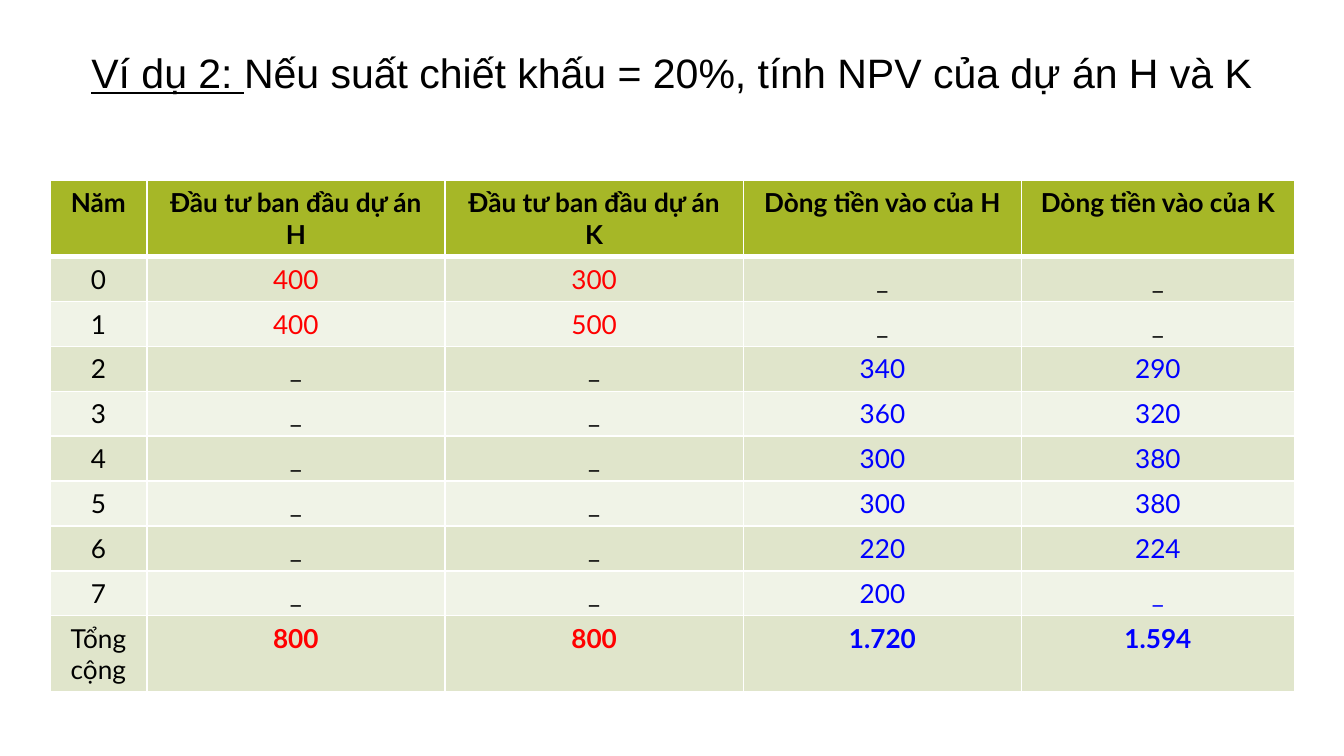
import pptx
import pptx.dml.color
import pptx.enum.text
import pptx.oxml
import pptx.oxml.ns
import pptx.util

Pt = pptx.util.Pt
BLACK, RED, BLUE, WHITE = "000000", "FF0000", "0000FF", "FFFFFF"
HEADER_FILL = "A6B727"
BAND_FILLS = ["F0F3E7", "E0E5CB"]
COLUMN_WIDTHS = [51.84, 159.84, 159.84, 149.04, 146.16]
COLUMN_COLORS = [BLACK, RED, RED, BLUE, BLUE]
ROW_HEIGHT = 23.3
CASH_FLOWS = [
    ["Năm", "Đầu tư ban đầu dự án H", "Đầu tư ban đầu dự án K",
     "Dòng tiền vào của H", "Dòng tiền vào của K"],
    ["0", "400", "300", "_", "_"],
    ["1", "400", "500", "_", "_"],
    ["2", "_", "_", "340", "290"],
    ["3", "_", "_", "360", "320"],
    ["4", "_", "_", "300", "380"],
    ["5", "_", "_", "300", "380"],
    ["6", "_", "_", "220", "224"],
    ["7", "_", "_", "200", "_"],
    ["Tổng cộng", "800", "800", "1.720", "1.594"],
]
HEADER_ROW, TOTAL_ROW = 0, len(CASH_FLOWS) - 1
BLUE_DASH = (8, 4)


def rgb(color):
    return pptx.dml.color.RGBColor.from_string(color)


def set_attributes(target, values):
    for name, value in values.items():
        setattr(target, name, value)


def add_run(paragraph, text, color, **font_values):
    paragraph.alignment = pptx.enum.text.PP_ALIGN.CENTER
    run = paragraph.add_run()
    run.text = text
    set_attributes(run.font, font_values)
    run.font.color.rgb = rgb(color)


def add_title(slide):
    title = slide.shapes.add_textbox(Pt(24.5), Pt(15.8), Pt(671), Pt(45.4))
    margins = {f"margin_{side}": Pt(7.2) for side in ("left", "top", "right", "bottom")}
    set_attributes(title.text_frame, {
        "word_wrap": True,
        "vertical_anchor": pptx.enum.text.MSO_ANCHOR.MIDDLE,
        **margins,
    })
    heading = title.text_frame.paragraphs[0]
    font = {"name": "Arial", "size": Pt(22)}
    add_run(heading, "Ví dụ 2: ", BLACK, underline=True, **font)
    add_run(heading, "Nếu suất chiết khấu = 20%, tính NPV của dự án H và K", BLACK, **font)


def add_border(cell, side, width):
    namespace = pptx.oxml.ns.nsdecls("a")
    border = pptx.oxml.parse_xml(
        f'<a:ln{side} {namespace} w="{Pt(width)}"><a:solidFill>'
        f'<a:srgbClr val="{WHITE}"/></a:solidFill></a:ln{side}>')
    cell._tc.get_or_add_tcPr().append(border)


def text_color(row, column, text):
    if row == HEADER_ROW or (text == "_" and (row, column) != BLUE_DASH):
        return BLACK
    return COLUMN_COLORS[column]


def fill_cell(cell, row, column, text):
    set_attributes(cell, {"margin_left": Pt(7.2), "margin_right": Pt(7.2),
                          "margin_top": Pt(3.6), "margin_bottom": Pt(3.6)})
    bold = row == HEADER_ROW or (row == TOTAL_ROW and column > 0)
    add_run(cell.text_frame.paragraphs[0], text, text_color(row, column, text),
            name="Lato", size=Pt(14), bold=bold)
    for side in "LRTB":
        under_header = (row, side) in [(HEADER_ROW, "B"), (HEADER_ROW + 1, "T")]
        add_border(cell, side, 3 if under_header else 1)
    cell.fill.solid()
    cell.fill.fore_color.rgb = rgb(HEADER_FILL if row == HEADER_ROW else BAND_FILLS[row % 2])


def add_cash_flow_table(slide):
    cash_flow = slide.shapes.add_table(
        len(CASH_FLOWS), len(COLUMN_WIDTHS), Pt(26.8), Pt(96.7),
        Pt(sum(COLUMN_WIDTHS)), Pt(ROW_HEIGHT * len(CASH_FLOWS))).table
    for column, width in zip(cash_flow.columns, COLUMN_WIDTHS):
        column.width = Pt(width)
    for row, texts in enumerate(CASH_FLOWS):
        cash_flow.rows[row].height = Pt(ROW_HEIGHT)
        for column, text in enumerate(texts):
            fill_cell(cash_flow.cell(row, column), row, column, text)


def main():
    presentation = pptx.Presentation()
    set_attributes(presentation, {"slide_width": Pt(720), "slide_height": Pt(405)})
    slide = presentation.slides.add_slide(presentation.slide_layouts[6])
    add_title(slide)
    add_cash_flow_table(slide)
    presentation.save("out.pptx")


if __name__ == "__main__":
    main()
